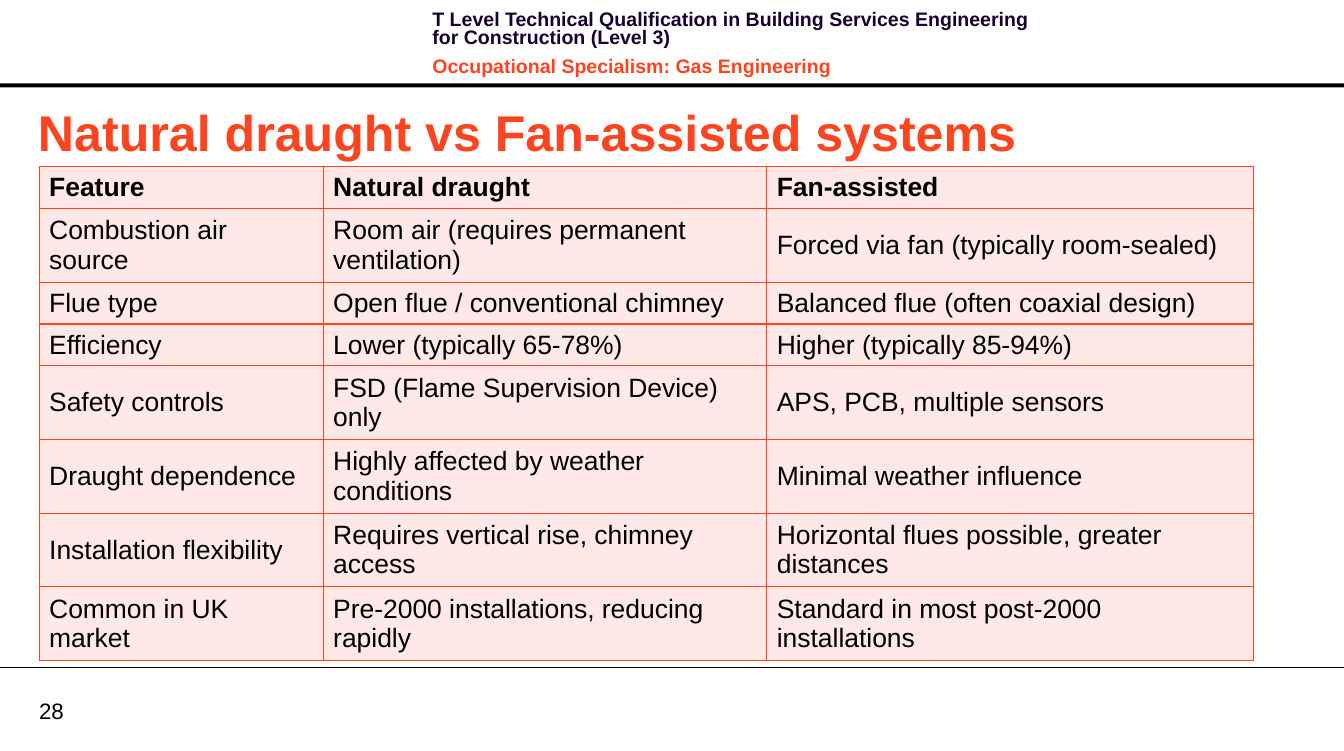
from lxml import etree
from pptx import Presentation, util as u
from pptx.dml.color import RGBColor
from pptx.enum import shapes, text
from pptx.oxml.ns import qn

WIDE, HIGH = 13.39, 7.48
LEFT = 0.39
RED, INK, BLACK, PINK = "FC4421", "170130", "000000", "FEE9E8"
COLS = [2.83, 4.42, 4.85]
LINE, PAIR = 0.39, 0.68
ROWS = [
    (LINE, "Feature", "Natural draught", "Fan-assisted"),
    (PAIR, "Combustion air source", "Room air (requires permanent ventilation)",
     "Forced via fan (typically room-sealed)"),
    (LINE, "Flue type", "Open flue / conventional chimney",
     "Balanced flue (often coaxial design)"),
    (LINE, "Efficiency", "Lower (typically 65-78%)", "Higher (typically 85-94%)"),
    (PAIR, "Safety controls", "FSD (Flame Supervision Device) only",
     "APS, PCB, multiple sensors"),
    (PAIR, "Draught dependence", "Highly affected by weather conditions",
     "Minimal weather influence"),
    (PAIR, "Installation flexibility", "Requires vertical rise, chimney access",
     "Horizontal flues possible, greater distances"),
    (PAIR, "Common in UK market", "Pre-2000 installations, reducing rapidly",
     "Standard in most post-2000 installations"),
]


def color(code):
    return RGBColor.from_string(code)


def paint(item, code):
    item.fill.solid()
    item.fill.fore_color.rgb = color(code)


def style(para, size, code, bold=False):
    font = para.font
    font.name, font.size, font.bold = "Arial", u.Pt(size), bold
    font.color.rgb = color(code)


def write(slide, box, lines, size, bold=True, inset=(0.1, 0.05), middle=True):
    frame = slide.shapes.add_textbox(*map(u.Inches, box)).text_frame
    frame.word_wrap = True
    frame.margin_left = frame.margin_right = u.Inches(inset[0])
    frame.margin_top = frame.margin_bottom = u.Inches(inset[1])
    frame.vertical_anchor = text.MSO_ANCHOR.MIDDLE if middle else text.MSO_ANCHOR.TOP
    for i, (words, code) in enumerate(lines):
        para = frame.add_paragraph() if i else frame.paragraphs[0]
        para.text = words
        style(para, size, code, bold)
    return frame


def header(slide, box):
    x, y, w, h = box
    band = slide.shapes.add_shape(
        shapes.MSO_SHAPE.RECTANGLE,
        *map(u.Inches, (x, y + h - 0.04, w, 0.04)))
    band.shadow.inherit = False
    paint(band, BLACK)
    band.line.fill.background()
    frame = write(slide, (x + 4.21, y + 0.07, 6.37, 0.64), [
        ("T Level Technical Qualification in Building Services Engineering "
         "for Construction (Level 3)", INK),
        ("Occupational Specialism: Gas Engineering", RED),
    ], 14, middle=False)
    for i, para in enumerate(frame.paragraphs):
        para.line_spacing = u.Pt(13.1)
        para.space_before = u.Pt(4 if i else 0)
        para.space_after = u.Pt(4)


def footer(slide, box):
    x, y, w, h = box
    rule = slide.shapes.add_connector(
        shapes.MSO_CONNECTOR.STRAIGHT, *map(u.Inches, (x, y, x + w, y)))
    rule.line.color.rgb = color(BLACK)
    rule.line.width = u.Pt(0.75)
    etree.SubElement(rule._element.spPr, qn("a:effectLst"))
    write(slide, (x + LEFT, y + 0.29, 0.64, 0.27), [("28", BLACK)], 16,
          bold=False, inset=(0, 0))


def border(cell):
    props = cell._tc.get_or_add_tcPr()
    for i, side in enumerate(("a:lnL", "a:lnR", "a:lnT", "a:lnB")):
        edge = etree.Element(qn(side), w=str(u.Pt(1)))
        fill = etree.SubElement(edge, qn("a:solidFill"))
        etree.SubElement(fill, qn("a:srgbClr"), val=RED)
        props.insert(i, edge)


def grid(slide, box):
    table = slide.shapes.add_table(
        len(ROWS), len(COLS), *map(u.Inches, box)).table
    table.horz_banding = False
    for col, width in zip(table.columns, COLS):
        col.width = u.Inches(width)
    for r, (height, *words) in enumerate(ROWS):
        table.rows[r].height = u.Inches(height)
        for c, word in enumerate(words):
            cell = table.cell(r, c)
            cell.text = word
            cell.vertical_anchor = text.MSO_ANCHOR.MIDDLE
            style(cell.text_frame.paragraphs[0], 19, BLACK, r == 0)
            paint(cell, PINK)
            border(cell)


def main():
    deck = Presentation()
    deck.slide_width, deck.slide_height = u.Inches(WIDE), u.Inches(HIGH)
    slide = deck.slides.add_slide(deck.slide_layouts[6])
    header(slide, (0, 0, WIDE, 0.87))
    footer(slide, (0, 6.65, WIDE, HIGH - 6.65))
    write(slide, (0.28, 0.95, 12.72, 0.71),
          [("Natural draught vs Fan-assisted systems", RED)], 36)
    grid(slide, (LEFT, 1.66, sum(COLS), sum(row[0] for row in ROWS)))
    deck.save("out.pptx")


if __name__ == "__main__":
    main()
